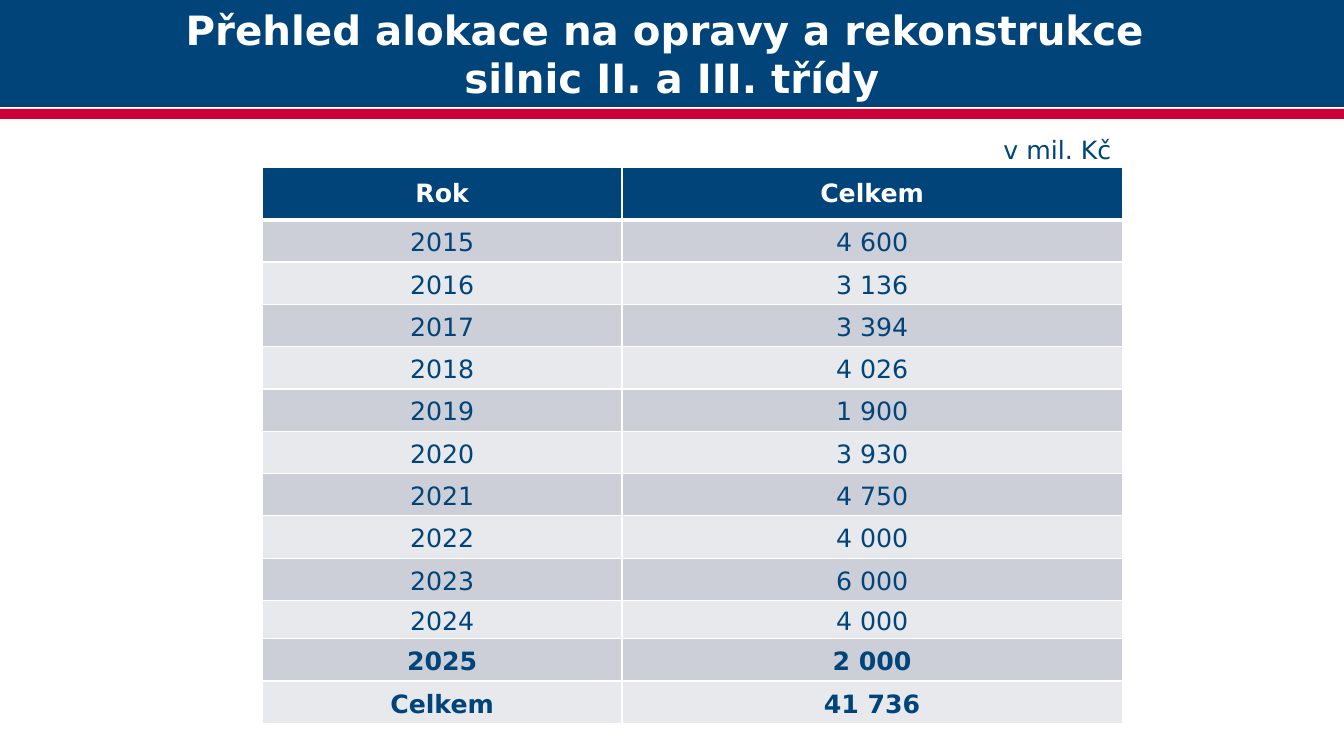
from lxml import etree
from pptx import Presentation
from pptx.dml.color import RGBColor
from pptx.enum.shapes import MSO_SHAPE
from pptx.enum.text import MSO_ANCHOR, PP_ALIGN
from pptx.oxml.ns import qn
from pptx.util import Inches, Pt

RECTANGLE = MSO_SHAPE.RECTANGLE
MIDDLE = MSO_ANCHOR.MIDDLE
CENTER = PP_ALIGN.CENTER
RIGHT = PP_ALIGN.RIGHT

FONT = "DejaVu Sans"
NAVY = "00447A"
RED = "CD003A"
WHITE = "FFFFFF"
BANDS = ("CCCFD7", "E7E9EC")

COLUMN_WIDTHS = (3.57, 4.96)
HEADER_HEIGHT = 0.52
ROW_HEIGHT = 0.42
ROW_HEIGHTS = {"2024": 0.38}
BOLD_ROWS = ("2025", "Celkem")
HEADER = ("Rok", "Celkem")
ALLOCATIONS = (
    ("2015", "4 600"),
    ("2016", "3 136"),
    ("2017", "3 394"),
    ("2018", "4 026"),
    ("2019", "1 900"),
    ("2020", "3 930"),
    ("2021", "4 750"),
    ("2022", "4 000"),
    ("2023", "6 000"),
    ("2024", "4 000"),
    ("2025", "2 000"),
    ("Celkem", "41 736"),
)


def color(value):
    return RGBColor.from_string(value)


def write(text_frame, text, size, text_color, alignment, bold=False):
    text_frame.text = text
    paragraph = text_frame.paragraphs[0]
    paragraph.alignment = alignment
    for run in paragraph.runs:
        run.font.name = FONT
        run.font.size = Pt(size)
        run.font.bold = bold
        run.font.color.rgb = color(text_color)
    return paragraph


def add_bar(slide, left, top, width, height, fill):
    shape = slide.shapes.add_shape(
        RECTANGLE, Inches(left), Inches(top), Inches(width), Inches(height))
    shape.shadow.inherit = False
    shape.fill.solid()
    shape.fill.fore_color.rgb = color(fill)
    shape.line.fill.background()
    return shape


def add_title(slide, left, top, width, height):
    add_bar(slide, left, top + height - 0.1, width, 0.1, RED)
    title = add_bar(slide, left, top, width, height - 0.12, NAVY)
    title.text_frame.word_wrap = True
    title.text_frame.vertical_anchor = MIDDLE
    write(title.text_frame,
          "Přehled alokace na opravy a rekonstrukce \vsilnic II. a III. třídy",
          28.8, WHITE, CENTER, True)


def add_unit(slide, left, top, width, height):
    box = slide.shapes.add_textbox(
        Inches(left), Inches(top), Inches(width), Inches(height))
    box.text_frame.word_wrap = True
    write(box.text_frame, "v mil. Kč", 18, NAVY, RIGHT)


def set_borders(cell, bottom_width):
    properties = cell._tc.get_or_add_tcPr()
    widths = {"a:lnL": 1, "a:lnR": 1, "a:lnT": 1, "a:lnB": bottom_width}
    for tag, width in widths.items():
        line = etree.SubElement(properties, qn(tag), w=str(Pt(width)))
        fill = etree.SubElement(line, qn("a:solidFill"))
        etree.SubElement(fill, qn("a:srgbClr"), val=WHITE)


def format_cell(cell, text, fill, text_color, bold, bottom_width):
    set_borders(cell, bottom_width)
    cell.fill.solid()
    cell.fill.fore_color.rgb = color(fill)
    cell.vertical_anchor = MIDDLE
    return write(cell.text_frame, text, 18, text_color, CENTER, bold)


def add_allocations(slide, left, top, width, height):
    table = slide.shapes.add_table(
        len(ALLOCATIONS) + 1, len(HEADER),
        Inches(left), Inches(top), Inches(width), Inches(height)).table
    for column, column_width in zip(table.columns, COLUMN_WIDTHS):
        column.width = Inches(column_width)

    table.rows[0].height = Inches(HEADER_HEIGHT)
    for cell, text in zip(table.rows[0].cells, HEADER):
        format_cell(cell, text, NAVY, WHITE, True, 3)

    for index, values in enumerate(ALLOCATIONS):
        row = table.rows[index + 1]
        year = values[0]
        row.height = Inches(ROW_HEIGHTS.get(year, ROW_HEIGHT))
        for cell, text in zip(row.cells, values):
            cell.margin_left = cell.margin_right = Inches(0.05)
            cell.margin_top = cell.margin_bottom = 0
            paragraph = format_cell(
                cell, text, BANDS[index % 2], NAVY, year in BOLD_ROWS, 1)
            paragraph.line_spacing = 1.15


def main():
    presentation = Presentation()
    presentation.slide_width = Inches(13.33)
    presentation.slide_height = Inches(7.5)
    slide = presentation.slides.add_slide(presentation.slide_layouts[6])
    add_title(slide, 0, 0, 13.33, 1.18)
    add_allocations(slide, 2.6, 1.66, 8.53, 5.52)
    add_unit(slide, 9.81, 1.28, 1.31, 0.4)
    presentation.save("out.pptx")


if __name__ == "__main__":
    main()
